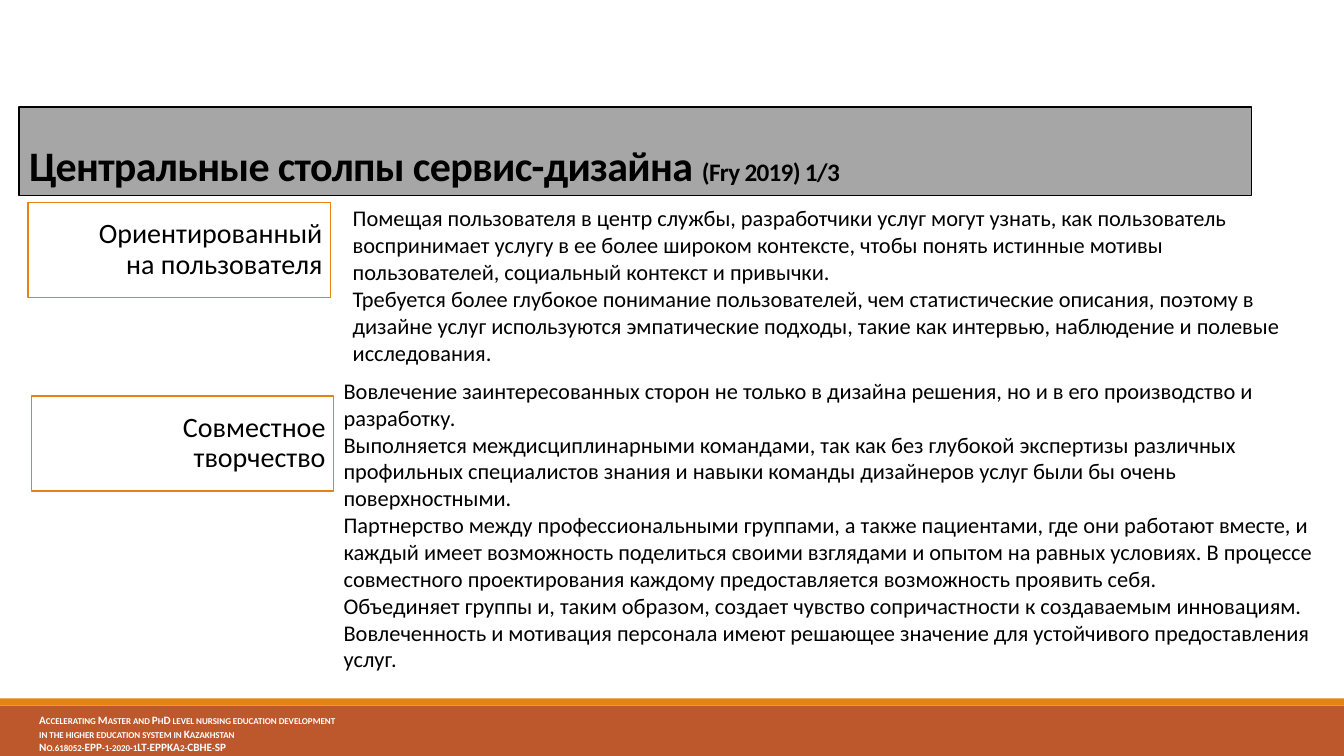
from dataclasses import dataclass

import pptx
import pptx.dml.color
import pptx.enum.shapes
import pptx.enum.text
import pptx.oxml.ns
import pptx.util
from lxml import etree

Inches = pptx.util.Inches
Pt = pptx.util.Pt
Align = pptx.enum.text.PP_ALIGN
Anchor = pptx.enum.text.MSO_ANCHOR


@dataclass
class Box:
    left: float
    top: float
    width: float
    height: float


@dataclass
class Pillar:
    label: str
    frame: Box
    notes: list[str]
    body: Box


PILLARS = [
    Pillar(
        "Ориентированный на пользователя",
        Box(0.28, 2.01, 3, 0.94),
        [
            "Помещая пользователя в центр службы, разработчики услуг могут узнать, как пользователь "
            "воспринимает услугу в ее более широком контексте, чтобы понять истинные мотивы "
            "пользователей, социальный контекст и привычки.",
            "Требуется более глубокое понимание пользователей, чем статистические описания, поэтому в "
            "дизайне услуг используются эмпатические подходы, такие как интервью, наблюдение и полевые "
            "исследования.",
        ],
        Box(3.4, 1.98, 9.65, 1.72),
    ),
    Pillar(
        "Совместное творчество",
        Box(0.31, 3.93, 3, 0.94),
        [
            "Вовлечение заинтересованных сторон не только в дизайна решения, но и в его производство и "
            "разработку.",
            "Выполняется междисциплинарными командами, так как без глубокой экспертизы различных "
            "профильных специалистов знания и навыки команды дизайнеров услуг были бы очень "
            "поверхностными.",
            "Партнерство между профессиональными группами, а также пациентами, где они работают вместе, и "
            "каждый имеет возможность поделиться своими взглядами и опытом на равных условиях. В процессе "
            "совместного проектирования каждому предоставляется возможность проявить себя.",
            "Объединяет группы и, таким образом, создает чувство сопричастности к создаваемым инновациям. "
            "Вовлеченность и мотивация персонала имеют решающее значение для устойчивого предоставления "
            "услуг.",
        ],
        Box(3.31, 3.69, 9.84, 3.06),
    ),
]

FOOTER = [
    "Accelerating Master and PhD level nursing education development",
    "in the higher education system in Kazakhstan",
    "No.618052-EPP-1-2020-1LT-EPPKA2-CBHE-SP",
]


def color(code: str) -> pptx.dml.color.RGBColor:
    return pptx.dml.color.RGBColor.from_string(code)


def place(box: Box) -> tuple:
    return tuple(Inches(n) for n in (box.left, box.top, box.width, box.height))


def add_rect(slide, box: Box, fill: str, line: str = "", alpha: int = 100):
    kind = pptx.enum.shapes.MSO_SHAPE.RECTANGLE
    rect = slide.shapes.add_shape(kind, *place(box))
    rect.shadow.inherit = False
    rect.fill.solid()
    rect.fill.fore_color.rgb = color(fill)
    if alpha < 100:
        qn = pptx.oxml.ns.qn
        tint = rect.fill._xPr.find(qn("a:solidFill")).find(qn("a:srgbClr"))
        etree.SubElement(tint, qn("a:alpha"), val=str(alpha * 1000))
    if line:
        rect.line.color.rgb = color(line)
        rect.line.width = Pt(1)
    else:
        rect.line.fill.background()
    return rect


def add_text(para, text: str, *, size: float, tint: str = "000000", bold: bool = False,
             align=Align.LEFT, lines: float = 1.0, after: float = 0, **marks: str) -> None:
    para.alignment = align
    para.line_spacing = lines
    para.space_after = Pt(after)
    run = para.add_run()
    run.text = text
    run.font.name = "Calibri"
    run.font.size = Pt(size)
    run.font.bold = bold
    run.font.color.rgb = color(tint)
    for key, value in marks.items():
        run._r.get_or_add_rPr().set(key, value)


def add_block(slide, box: Box, texts: list[str], **style) -> None:
    frame = slide.shapes.add_textbox(*place(box)).text_frame
    frame.word_wrap = True
    for i, text in enumerate(texts):
        para = frame.add_paragraph() if i else frame.paragraphs[0]
        add_text(para, text, **style)


def add_title(slide) -> None:
    frame = add_rect(slide, Box(0.19, 1.06, 12.22, 0.88), "A6A6A6", "000000").text_frame
    frame.word_wrap = True
    frame.vertical_anchor = Anchor.BOTTOM
    para = frame.paragraphs[0]
    for text, size in (("Центральные столпы сервис-дизайна ", 30), ("(Fry 2019) 1/3", 18)):
        add_text(para, text, size=size, bold=True, lines=0.85, spc="-50")


def add_pillar(slide, pillar: Pillar) -> None:
    frame = add_rect(slide, pillar.frame, "FFFFFF", "E48312", 40).text_frame
    frame.word_wrap = True
    frame.vertical_anchor = Anchor.MIDDLE
    frame.margin_left = Inches(0.63)
    frame.margin_top = frame.margin_right = frame.margin_bottom = Inches(0.08)
    add_text(frame.paragraphs[0], pillar.label, size=20, align=Align.RIGHT, lines=0.9, after=7)
    add_block(slide, pillar.body, pillar.notes, size=16)


def main() -> None:
    deck = pptx.Presentation()
    deck.slide_width = Inches(13.33)
    deck.slide_height = Inches(7.5)
    slide = deck.slides.add_slide(deck.slide_layouts[6])
    add_rect(slide, Box(0, 7, 13.33, 0.5), "BD582C")
    add_rect(slide, Box(0, 6.93, 13.33, 0.07), "E48312")
    add_block(slide, Box(0.29, 7.03, 4.59, 0.47), FOOTER,
              size=8, tint="FFFFFF", bold=True, cap="small")
    add_title(slide)
    for pillar in PILLARS:
        add_pillar(slide, pillar)
    deck.save("out.pptx")


if __name__ == "__main__":
    main()
